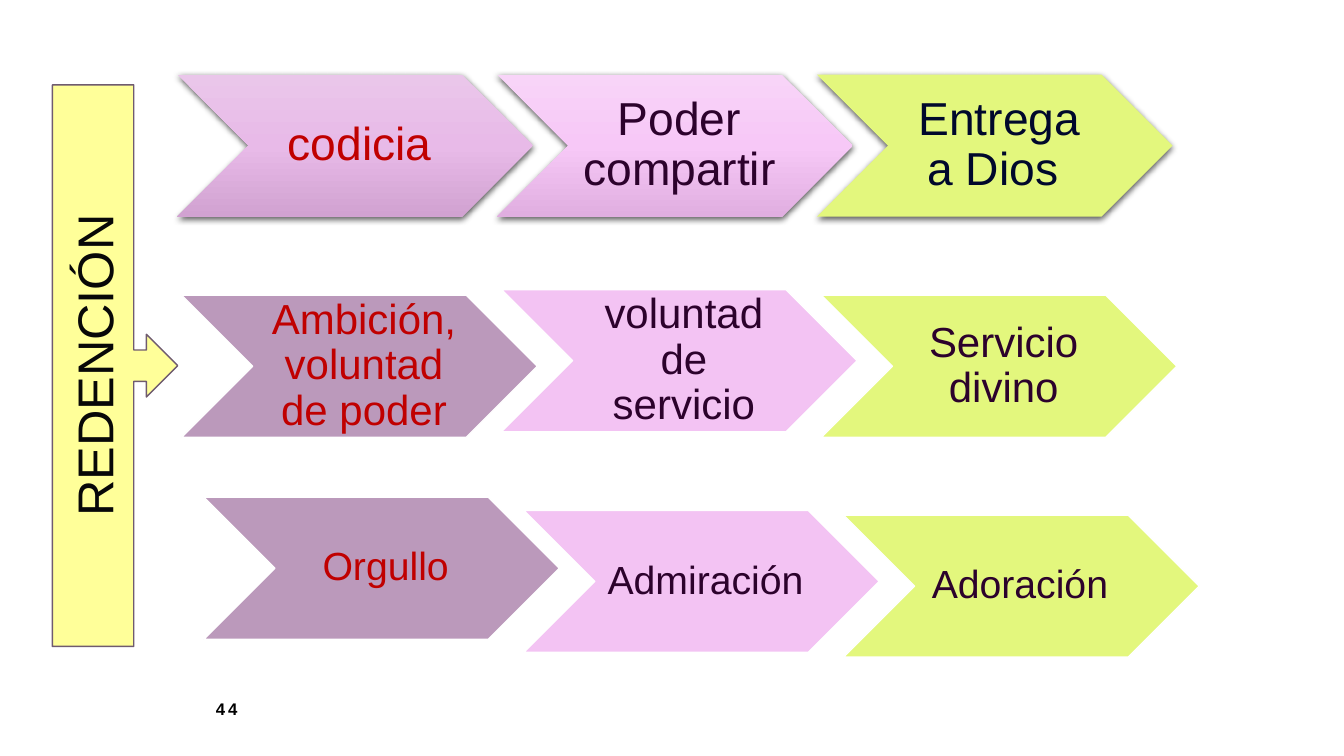
from copy import deepcopy
from dataclasses import dataclass

from lxml import etree
from pptx import Presentation
from pptx.dml.color import RGBColor
from pptx.enum.shapes import MSO_SHAPE
from pptx.enum.text import MSO_ANCHOR, PP_ALIGN
from pptx.oxml.ns import qn
from pptx.util import Cm, Pt

CHEVRON = MSO_SHAPE.CHEVRON
CALLOUT = MSO_SHAPE.RIGHT_ARROW_CALLOUT
MIDDLE = MSO_ANCHOR.MIDDLE
CENTER = PP_ALIGN.CENTER

# Chevron grid, in cm
WIDTH, HEIGHT, PITCH = 8.96, 3.58, 8.06
INDENT = HEIGHT / 2

RED, PLUM, NAVY = "C00000", "2C022C", "00082C"
MAUVE, PINK, LIME = "BB99BB", "F3C3F3", "E3F77D"


@dataclass
class Step:
    text: str
    ink: str
    fills: list[str]  # one colour is solid, three are a gradient
    top: float


@dataclass
class Row:
    left: float
    size: int
    inset: tuple[float, float]  # left, other sides
    raised: bool
    steps: list[Step]


ROWS = [
    Row(4.47, 33, (0.36, 0.13), True, [
        Step("codicia", RED, ["EAC6EA", "E8BAE8", "D1A2D1"], 1.88),
        Step("Poder compartir", PLUM, ["F8D4F8", "F7C8F7", "E0AEE0"], 1.88),
        Step("Entrega a Dios ", NAVY, [LIME], 1.88),
    ]),
    Row(4.58, 30, (0.33, 0.1), False, [
        Step("Ambición, voluntad de poder", RED, [MAUVE], 7.44),
        Step("voluntad de servicio", PLUM, [PINK], 7.3),
        Step("Servicio divino", PLUM, [LIME], 7.44),
    ]),
    Row(5.14, 28, (0.3, 0.1), False, [
        Step("Orgullo", RED, [MAUVE], 12.53),
        Step("Admiración", PLUM, [PINK], 12.86),
        Step("Adoración ", PLUM, [LIME], 12.98),
    ]),
]


def rgb(code: str) -> RGBColor:
    return RGBColor.from_string(code)


def put(shape, text: str, *, size: float, ink: str, bold: bool = False,
        track: int = 0, space: float = 1.0, inset=None, turn: str = "") -> None:
    """Write centred text into a shape."""
    frame = shape.text_frame
    frame.word_wrap = True
    frame.vertical_anchor = MIDDLE
    if inset:
        frame.margin_left = Cm(inset[0])
        frame.margin_top = frame.margin_right = frame.margin_bottom = Cm(inset[1])
    if turn:
        frame._txBody.bodyPr.set("vert", turn)
    para = frame.paragraphs[0]
    para.alignment = CENTER
    para.line_spacing = space
    run = para.add_run()
    run.text = text
    font = run.font
    font.name, font.size, font.bold = "Arial", Pt(size), bold
    font.color.rgb = rgb(ink)
    if track:
        run._r.get_or_add_rPr().set("spc", str(track))


def paint(shape, fills: list[str], line: str = "") -> None:
    """Fill and outline a shape, with no shadow."""
    if len(fills) == 1:
        shape.fill.solid()
        shape.fill.fore_color.rgb = rgb(fills[0])
    else:
        shape.fill.gradient()
        shape.fill.gradient_angle = 270
        stops = shape.element.spPr.find(".//" + qn("a:gsLst"))
        stops.insert(1, deepcopy(stops[0]))
        for i, (stop, code) in enumerate(zip(shape.fill.gradient_stops, fills)):
            stop.position = i / 2
            stop.color.rgb = rgb(code)
    if line:
        shape.line.color.rgb = rgb(line)
        shape.line.width = Pt(1)
    else:
        shape.line.fill.background()
    shape.shadow.inherit = False


def lift(shape) -> None:
    """Add a soft shadow below a shape."""
    effects = shape.element.spPr.find(qn("a:effectLst"))
    cast = etree.SubElement(effects, qn("a:outerShdw"), blurRad=str(Pt(4.5)),
                            dist=str(Pt(1.5)), dir="5400000", rotWithShape="0")
    tone = etree.SubElement(cast, qn("a:srgbClr"), val="000000")
    etree.SubElement(tone, qn("a:alpha"), val="63000")


def draw_row(slide, row: Row) -> None:
    shapes = slide.shapes.add_group_shape().shapes
    for i, step in enumerate(row.steps):
        left = row.left + i * PITCH
        arrow = shapes.add_shape(CHEVRON, Cm(left), Cm(step.top),
                                 Cm(WIDTH), Cm(HEIGHT))
        paint(arrow, step.fills, "" if row.raised else "FFFFFF")
        if row.raised:
            lift(arrow)
        label = shapes.add_textbox(Cm(left + INDENT), Cm(step.top),
                                   Cm(WIDTH - 2 * INDENT), Cm(HEIGHT))
        put(label, step.text, size=row.size, ink=step.ink, space=0.9,
            inset=row.inset)


def main() -> None:
    deck = Presentation()
    deck.slide_width, deck.slide_height = Cm(33.87), Cm(19.05)
    slide = deck.slides.add_slide(deck.slide_layouts[6])

    # Page number
    page = slide.shapes.add_textbox(Cm(0), Cm(16.69), Cm(11.43), Cm(2.36))
    put(page, "44", size=12, ink="000000", bold=True, track=200)

    # Three rows of chevrons
    for row in ROWS:
        draw_row(slide, row)

    # Side callout
    side = slide.shapes.add_shape(CALLOUT, Cm(1.32), Cm(2.14), Cm(3.16), Cm(14.15))
    paint(side, ["FFFF99"], "6F5B6F")
    put(side, "REDENCIÓN", size=36, ink="080808", turn="vert270")

    deck.save("out.pptx")


if __name__ == "__main__":
    main()
